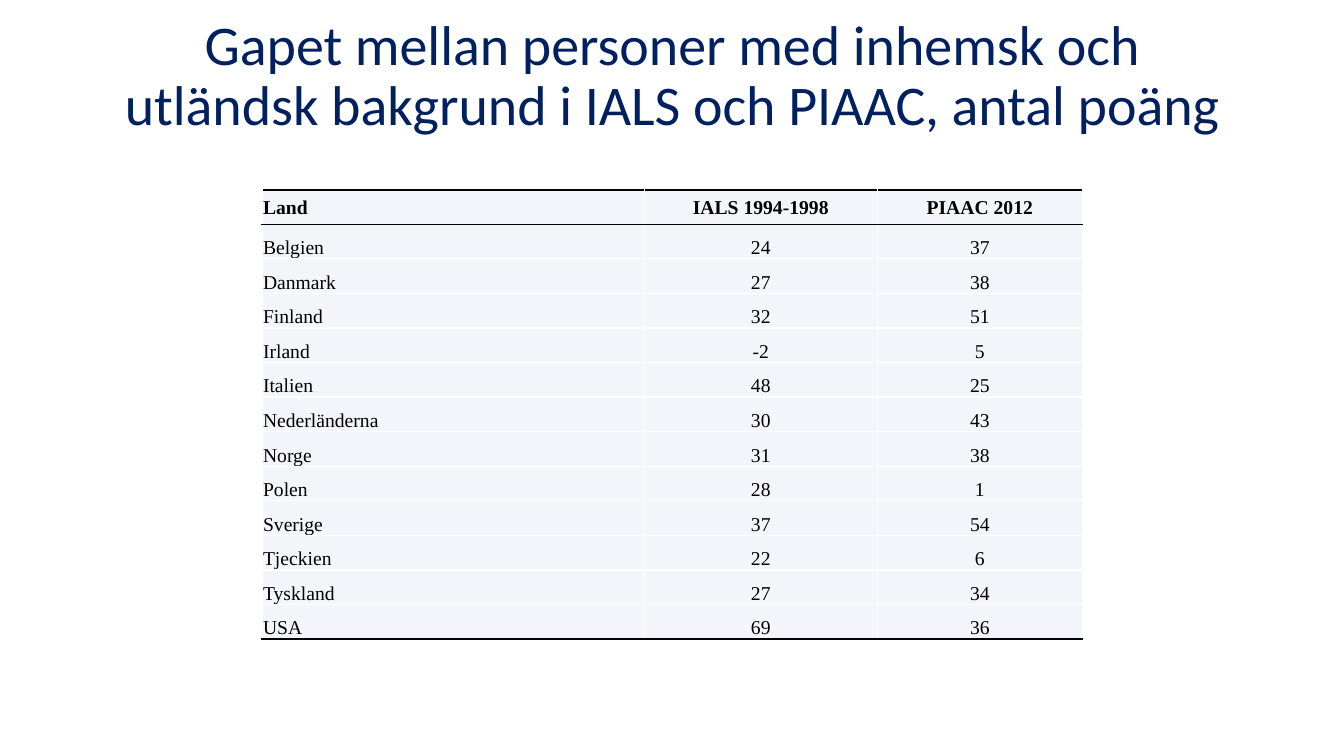
from lxml.etree import SubElement
from pptx import Presentation
from pptx.dml.color import RGBColor
from pptx.enum.text import MSO_ANCHOR, PP_ALIGN
from pptx.oxml.ns import qn
from pptx.util import Pt

TITLE = "Gapet mellan personer med inhemsk och utländsk bakgrund i IALS och PIAAC, antal poäng"
HEADER = ("Land", "IALS 1994-1998", "PIAAC 2012")
GAPS = [
    ("Belgien", 24, 37),
    ("Danmark", 27, 38),
    ("Finland", 32, 51),
    ("Irland", -2, 5),
    ("Italien", 48, 25),
    ("Nederländerna", 30, 43),
    ("Norge", 31, 38),
    ("Polen", 28, 1),
    ("Sverige", 37, 54),
    ("Tjeckien", 22, 6),
    ("Tyskland", 27, 34),
    ("USA", 69, 36),
]

NAVY = RGBColor(0x00, 0x20, 0x60)
BLACK = RGBColor(0x00, 0x00, 0x00)
WHITE = RGBColor(0xFF, 0xFF, 0xFF)
PALE = RGBColor(0xF4, 0xF5, 0xFA)

COLUMN_WIDTHS = (273, 166.5, 146.5)
ROW_HEIGHT = 24.7
TABLE_LEFT, TABLE_TOP = 187.2, 135.5


def style_paragraph(paragraph, font_name, size, color, alignment, bold=False):
    paragraph.alignment = alignment
    font = paragraph.runs[0].font
    font.name, font.size, font.bold = font_name, Pt(size), bold
    font.color.rgb = color


def add_border(cell, side, color, width):
    properties = cell._tc.get_or_add_tcPr()
    line = SubElement(properties, qn(f"a:ln{side}"), w=str(Pt(width)))
    fill = SubElement(line, qn("a:solidFill"))
    SubElement(fill, qn("a:srgbClr"), val=str(color))


def add_title(slide):
    shape = slide.shapes.add_textbox(Pt(66.2), Pt(28.8), Pt(828), Pt(53.3))
    frame = shape.text_frame
    frame.word_wrap = True
    frame.vertical_anchor = MSO_ANCHOR.MIDDLE
    frame.text = TITLE
    paragraph = frame.paragraphs[0]
    paragraph.line_spacing = 0.9
    style_paragraph(paragraph, "Calibri", 40, NAVY, PP_ALIGN.CENTER)


def fill_cell(cell, value, row, column, last_row):
    is_header = row == 0
    cell.text = str(value)
    cell.margin_left = cell.margin_right = cell.margin_top = Pt(0.7)
    cell.margin_bottom = Pt(0)
    cell.vertical_anchor = MSO_ANCHOR.MIDDLE if is_header else MSO_ANCHOR.BOTTOM
    alignment = PP_ALIGN.CENTER if column else PP_ALIGN.LEFT
    style_paragraph(cell.text_frame.paragraphs[0], "Times New Roman", 14, BLACK, alignment, is_header)
    add_border(cell, "L", WHITE, 1)
    add_border(cell, "R", WHITE, 1)
    add_border(cell, "T", BLACK if row <= 1 else WHITE, 1.5 if is_header else 1)
    add_border(cell, "B", BLACK if row in (0, last_row) else WHITE, 1)
    cell.fill.solid()
    cell.fill.fore_color.rgb = PALE


def add_gap_table(slide):
    rows = [HEADER, *GAPS]
    table = slide.shapes.add_table(
        len(rows), len(HEADER), Pt(TABLE_LEFT), Pt(TABLE_TOP),
        Pt(sum(COLUMN_WIDTHS)), Pt(ROW_HEIGHT * len(rows)),
    ).table
    table.first_row = table.horz_banding = False
    for column, width in zip(table.columns, COLUMN_WIDTHS):
        column.width = Pt(width)
    for row, values in enumerate(rows):
        table.rows[row].height = Pt(ROW_HEIGHT)
        for column, value in enumerate(values):
            fill_cell(table.cell(row, column), value, row, column, len(rows) - 1)


def main():
    presentation = Presentation()
    presentation.slide_width, presentation.slide_height = Pt(960), Pt(540)
    slide = presentation.slides.add_slide(presentation.slide_layouts[6])
    add_title(slide)
    add_gap_table(slide)
    presentation.save("out.pptx")


if __name__ == "__main__":
    main()
